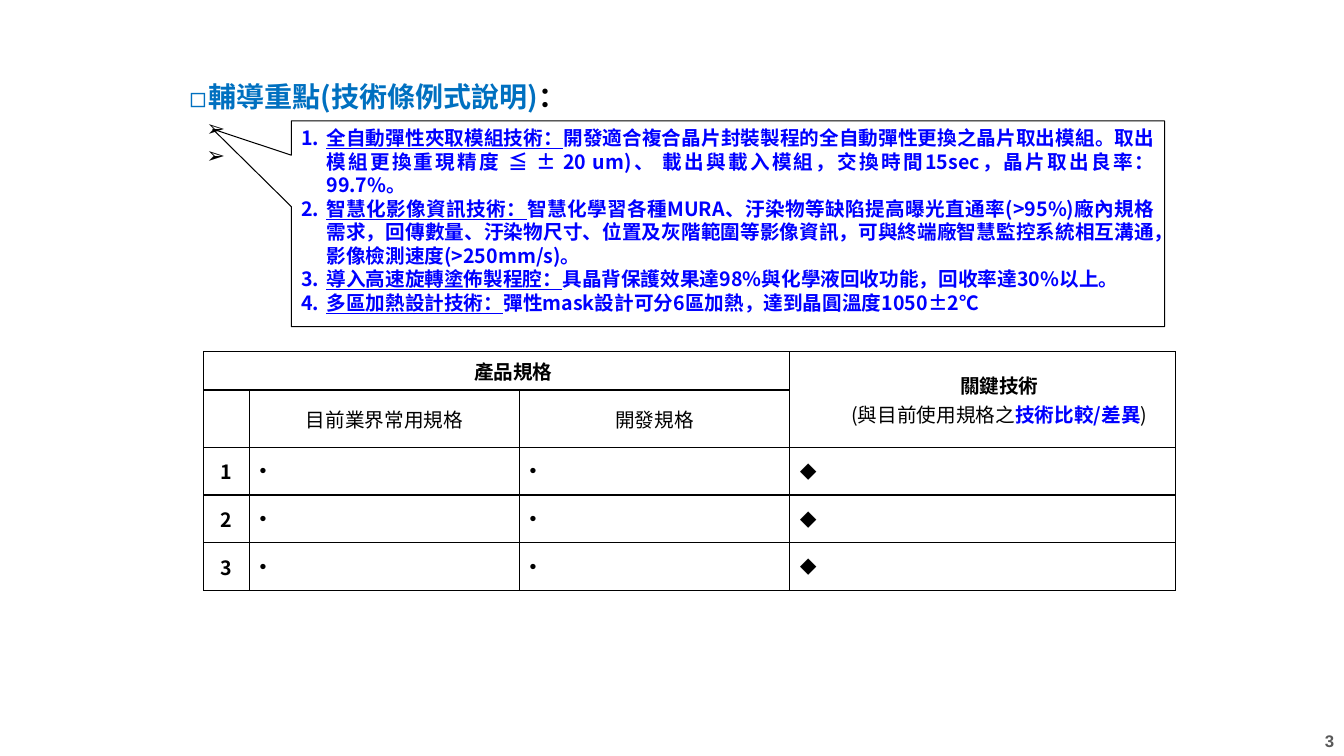
from dataclasses import dataclass, field

from lxml import etree
from pptx import Presentation
from pptx.dml.color import RGBColor
from pptx.enum.shapes import MSO_SHAPE
from pptx.enum.text import MSO_ANCHOR, PP_ALIGN
from pptx.oxml.ns import qn
from pptx.util import Inches, Length, Pt

CALLOUT = MSO_SHAPE.RECTANGULAR_CALLOUT
TOP, MIDDLE = MSO_ANCHOR.TOP, MSO_ANCHOR.MIDDLE
CENTER, RIGHT, JUSTIFY = PP_ALIGN.CENTER, PP_ALIGN.RIGHT, PP_ALIGN.JUSTIFY

BLACK = RGBColor(0x00, 0x00, 0x00)
GREY = RGBColor(0x59, 0x59, 0x59)
TITLE_BLUE = RGBColor(0x00, 0x70, 0xC0)
KEY_BLUE = RGBColor(0x00, 0x00, 0xFF)
CJK, LATIN = "Noto Sans CJK SC", "Arial"
LINE_FACTOR = 1.2
NUMBERED = "arabicPeriod"

WIDTH, HEIGHT = Inches(13.33), Inches(7.5)


@dataclass
class Words:
    text: str
    format: dict = field(default_factory=dict)
    color: RGBColor = BLACK
    face: str = CJK


@dataclass
class Line:
    words: list[Words]
    align: PP_ALIGN = JUSTIFY
    margin: float = 0
    indent: float = 0
    bullet: str = ""
    spacing: Length | None = None


@dataclass
class Area:
    """Left, top, width and height in percent of the slide."""
    left: float
    top: float
    width: float
    height: float

    def box(self) -> tuple[Length, Length, Length, Length]:
        return across(self.left), down(self.top), across(self.width), down(self.height)


def across(percent: float) -> Length:
    return Length(round(WIDTH * percent / 100))


def down(percent: float) -> Length:
    return Length(round(HEIGHT * percent / 100))


def style(size: float, bold: bool = True, underline: bool = False) -> dict:
    return {"size": Pt(size), "bold": bold, "underline": underline}


NUMBER_AREA = Area(93.77, 96.27, 6.23, 3.47)
TITLE_AREA = Area(13.35, 9.87, 73.22, 16.67)
CALLOUT_AREA = Area(21.68, 16, 64.97, 27.2)
TABLE_AREA = Area(15.15, 46.53, 72.34, 31.53)
COLUMNS = (3.41, 20.1, 20.1, 28.73)
ROWS = (5.07, 7.53, 6.31, 6.31, 6.31)

TECHNIQUES = (
    ("全自動彈性夾取模組技術：",
     "開發適合複合晶片封裝製程的全自動彈性更換之晶片取出模組。取出模組更換重現精度 ≦ ± 20 um)、 "
     "載出與載入模組，交換時間15sec，晶片取出良率：99.7%。"),
    ("智慧化影像資訊技術：",
     "智慧化學習各種MURA、汙染物等缺陷提高曝光直通率(>95%)廠內規格需求，回傳數量、汙染物尺寸、"
     "位置及灰階範圍等影像資訊，可與終端廠智慧監控系統相互溝通，影像檢測速度(>250mm/s)。"),
    ("導入高速旋轉塗佈製程腔：", "具晶背保護效果達98%與化學液回收功能，回收率達30%以上。"),
    ("多區加熱設計技術：", "彈性mask設計可分6區加熱，達到晶圓溫度1050±2℃"),
)


def add_bullet(properties, bullet: str) -> None:
    if bullet == NUMBERED:
        etree.SubElement(properties, qn("a:buAutoNum"), type=NUMBERED)
    else:
        face = LATIN if bullet == "•" else CJK
        etree.SubElement(properties, qn("a:buFont"), typeface=face)
        etree.SubElement(properties, qn("a:buChar"), char=bullet)


def write(frame, lines: list[Line]) -> None:
    frame.word_wrap = True
    for index, line in enumerate(lines):
        paragraph = frame.add_paragraph() if index else frame.paragraphs[0]
        properties = paragraph._p.get_or_add_pPr()
        properties.set("marL", str(Inches(line.margin)))
        properties.set("indent", str(Inches(line.indent)))
        if line.bullet:
            add_bullet(properties, line.bullet)
        paragraph.alignment = line.align
        if line.spacing:
            paragraph.line_spacing = line.spacing
        for words in line.words:
            run = paragraph.add_run()
            run.text = words.text
            for name, value in words.format.items():
                setattr(run.font, name, value)
            run.font.color.rgb = words.color
            run.font.name = words.face
            etree.SubElement(run.font._element, qn("a:ea"), typeface=words.face)


def add_text(slide, area: Area, lines: list[Line], anchor: MSO_ANCHOR) -> None:
    frame = slide.shapes.add_textbox(*area.box()).text_frame
    frame.vertical_anchor = anchor
    write(frame, lines)


def add_title(slide) -> None:
    title = Line([Words("輔導重點(技術條例式說明)", style(20), TITLE_BLUE), Words("：", style(20))],
                 margin=0.19, indent=-0.19, bullet="◻", spacing=Pt(20 * LINE_FACTOR))
    points = [Line([Words(" ", style(16))], margin=0.39, indent=-0.22, bullet="➢",
                   spacing=Pt(16 * LINE_FACTOR)) for _ in range(2)]
    add_text(slide, TITLE_AREA, [title, *points], TOP)


def add_callout(slide) -> None:
    callout = slide.shapes.add_shape(CALLOUT, *CALLOUT_AREA.box())
    callout.adjustments[0], callout.adjustments[1] = -0.59, -0.46
    callout.shadow.inherit = False
    callout.fill.background()
    callout.line.color.rgb = BLACK
    callout.line.width = Pt(0.75)
    callout.text_frame.vertical_anchor = TOP
    write(callout.text_frame, [
        Line([Words(name, style(14, underline=True), KEY_BLUE), Words(detail, style(14), KEY_BLUE)],
             margin=0.25, indent=-0.25, bullet=NUMBERED, spacing=Pt(14 * LINE_FACTOR))
        for name, detail in TECHNIQUES])


def format_cell(cell) -> None:
    """Black border on every side, no fill, text in the middle."""
    properties = cell._tc.get_or_add_tcPr()
    for side in ("lnL", "lnR", "lnT", "lnB"):
        border = etree.SubElement(properties, qn(f"a:{side}"), w=str(Pt(1)))
        fill = etree.SubElement(border, qn("a:solidFill"))
        etree.SubElement(fill, qn("a:srgbClr"), val=str(BLACK))
    cell.fill.background()
    cell.vertical_anchor = MIDDLE


def add_specifications(slide) -> None:
    table = slide.shapes.add_table(len(ROWS), len(COLUMNS), *TABLE_AREA.box()).table
    table.first_row = table.horz_banding = False
    for column, width in zip(table.columns, COLUMNS):
        column.width = across(width)
    for row, height in zip(table.rows, ROWS):
        row.height = down(height)
    for cell in table.iter_cells():
        format_cell(cell)
    table.cell(0, 0).merge(table.cell(0, 2))
    table.cell(0, 3).merge(table.cell(1, 3))

    bold, plain = style(14), style(14, bold=False)
    contents = {
        (0, 0): [Line([Words("產品規格", bold)], CENTER, 0.33)],
        (0, 3): [Line([Words("關鍵技術", bold)], CENTER, 0.33),
                 Line([Words("(與目前使用規格之", plain), Words("技術比較/差異", bold, KEY_BLUE),
                       Words(")", plain)], CENTER, 0.33)],
        (1, 1): [Line([Words("目前業界常用規格", plain)], CENTER)],
        (1, 2): [Line([Words("開發規格", plain)], CENTER)],
    }
    for number in (1, 2, 3):
        row = number + 1
        contents[row, 0] = [Line([Words(str(number), bold)], CENTER, 0.27, -0.27)]
        for column in (1, 2):
            contents[row, column] = [Line([Words(" ", plain)], JUSTIFY, 0.2, -0.2, "•")]
        contents[row, 3] = [Line([Words("◆", style(12, bold=False))])]
    for (row, column), lines in contents.items():
        write(table.cell(row, column).text_frame, lines)


def main() -> None:
    deck = Presentation()
    deck.slide_width, deck.slide_height = WIDTH, HEIGHT
    slide = deck.slides.add_slide(deck.slide_layouts[6])
    add_text(slide, NUMBER_AREA, [Line([Words("3", style(12), GREY, LATIN)], RIGHT)], MIDDLE)
    add_title(slide)
    add_callout(slide)
    add_specifications(slide)
    deck.save("out.pptx")


if __name__ == "__main__":
    main()
